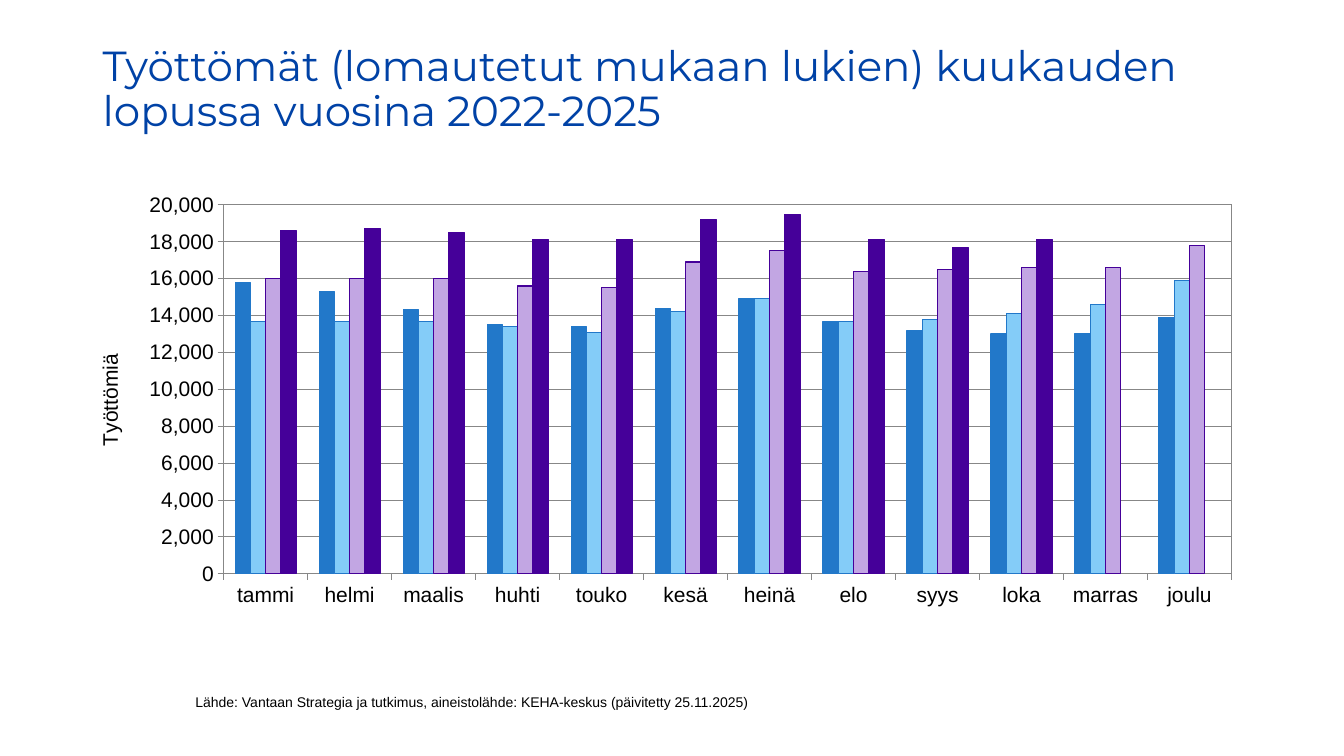
"""Build a slide with a clustered column chart of monthly unemployment in 2022-2025."""
from pptx import Presentation
from pptx.chart.data import CategoryChartData
from pptx.dml.color import RGBColor
from pptx.enum.chart import XL_CHART_TYPE, XL_TICK_MARK
from pptx.oxml import parse_xml
from pptx.oxml.ns import nsdecls
from pptx.util import Inches, Pt

COLUMNS = XL_CHART_TYPE.COLUMN_CLUSTERED
OUTSIDE, NO_TICK = XL_TICK_MARK.OUTSIDE, XL_TICK_MARK.NONE
BLUE, VIOLET, GRID = "2278C9", "450099", "878787"
MONTHS = ["tammi", "helmi", "maalis", "huhti", "touko", "kesä",
          "heinä", "elo", "syys", "loka", "marras", "joulu"]
YEARS = [
    ("2022", BLUE, BLUE, [15800, 15300, 14300, 13500, 13400, 14400,
                          14900, 13700, 13200, 13000, 13000, 13900]),
    ("2023", "84CCF8", BLUE, [13700, 13700, 13700, 13400, 13100, 14200,
                              14900, 13700, 13800, 14100, 14600, 15900]),
    ("2024", "C2A6E3", VIOLET, [16000, 16000, 16000, 15600, 15500, 16900,
                                17500, 16400, 16500, 16600, 16600, 17800]),
    ("2025", VIOLET, VIOLET, [18600, 18700, 18500, 18100, 18100, 19200,
                              19500, 18100, 17700, 18100, None, None]),
]


def rgb(value):
    return RGBColor.from_string(value)


def add_text(text, left, top, width, height, size, font, color="000000", spacing=1.0):
    tf = s.shapes.add_textbox(left, top, width, height).text_frame
    tf.word_wrap = True
    p = tf.paragraphs[0]
    p.line_spacing = spacing
    r = p.add_run()
    r.text = text
    r.font.size, r.font.name = Pt(size), font
    r.font.color.rgb = rgb(color)


prs = Presentation()
prs.slide_width, prs.slide_height = Inches(13.33), Inches(7.5)
s = prs.slides.add_slide(prs.slide_layouts[6])
margin = Inches(0.92)
content_width = prs.slide_width - 2 * margin

add_text("Työttömät (lomautetut mukaan lukien) kuukauden lopussa vuosina 2022-2025",
         margin, Inches(0.4), content_width, Inches(1.45), 30, "Montserrat",
         color="0042A6", spacing=0.9)

data = CategoryChartData(number_format="#,##0")
data.categories = MONTHS
for year, fill, line, values in YEARS:
    data.add_series(year, values)
chart = s.shapes.add_chart(COLUMNS, margin, Inches(1.85), content_width,
                           Inches(4.56), data).chart
chart.has_title = chart.has_legend = False
chart.font.name, chart.font.size = "Arial", Pt(15)
chart.font.color.rgb = rgb("000000")

plot = chart.plots[0]
plot.gap_width, plot.overlap, plot.vary_by_categories = 150, 0, False
for series, (year, fill, line, values) in zip(plot.series, YEARS):
    series.format.fill.solid()
    series.format.fill.fore_color.rgb = rgb(fill)
    series.format.line.color.rgb = rgb(line)
    series.format.line.width = Pt(0.75)

cats, vals = chart.category_axis, chart.value_axis
vals.minimum_scale, vals.maximum_scale, vals.major_unit = 0, 20000, 2000
vals.tick_labels.number_format = "#,##0"
vals.tick_labels.number_format_is_linked = False
vals.has_major_gridlines = True
for axis in (cats, vals):
    axis.major_tick_mark, axis.minor_tick_mark = OUTSIDE, NO_TICK
for part in (cats, vals, vals.major_gridlines):
    part.format.line.color.rgb = rgb(GRID)
    part.format.line.width = Pt(0.75)

r = vals.axis_title.text_frame.paragraphs[0].add_run()
r.text = "Työttömiä"
r.font.size, r.font.name, r.font.bold = Pt(15), "Arial", False
r.font.color.rgb = rgb("000000")

area = chart.plots[0]._element.getparent()
for layout in area.findall("{*}layout"):
    area.remove(layout)
shares = "".join(f'<c:{tag} val="{share}"/>' for tag, share in
                 zip("xywh", (0.113, 0.04, 0.87, 0.803)))
area.insert(0, parse_xml(
    f'<c:layout {nsdecls("c")}><c:manualLayout><c:layoutTarget val="inner"/>'
    f'<c:xMode val="edge"/><c:yMode val="edge"/>{shares}</c:manualLayout></c:layout>'))
area.append(parse_xml(
    f'<c:spPr {nsdecls("c", "a")}><a:noFill/><a:ln w="9525"><a:solidFill>'
    f'<a:srgbClr val="{GRID}"/></a:solidFill></a:ln></c:spPr>'))

add_text("Lähde: Vantaan Strategia ja tutkimus, aineistolähde: KEHA-keskus (päivitetty 25.11.2025)",
         2 * margin, Inches(6.83), Inches(5.83), Inches(0.4), 10, "Arial")

prs.save("out.pptx")
